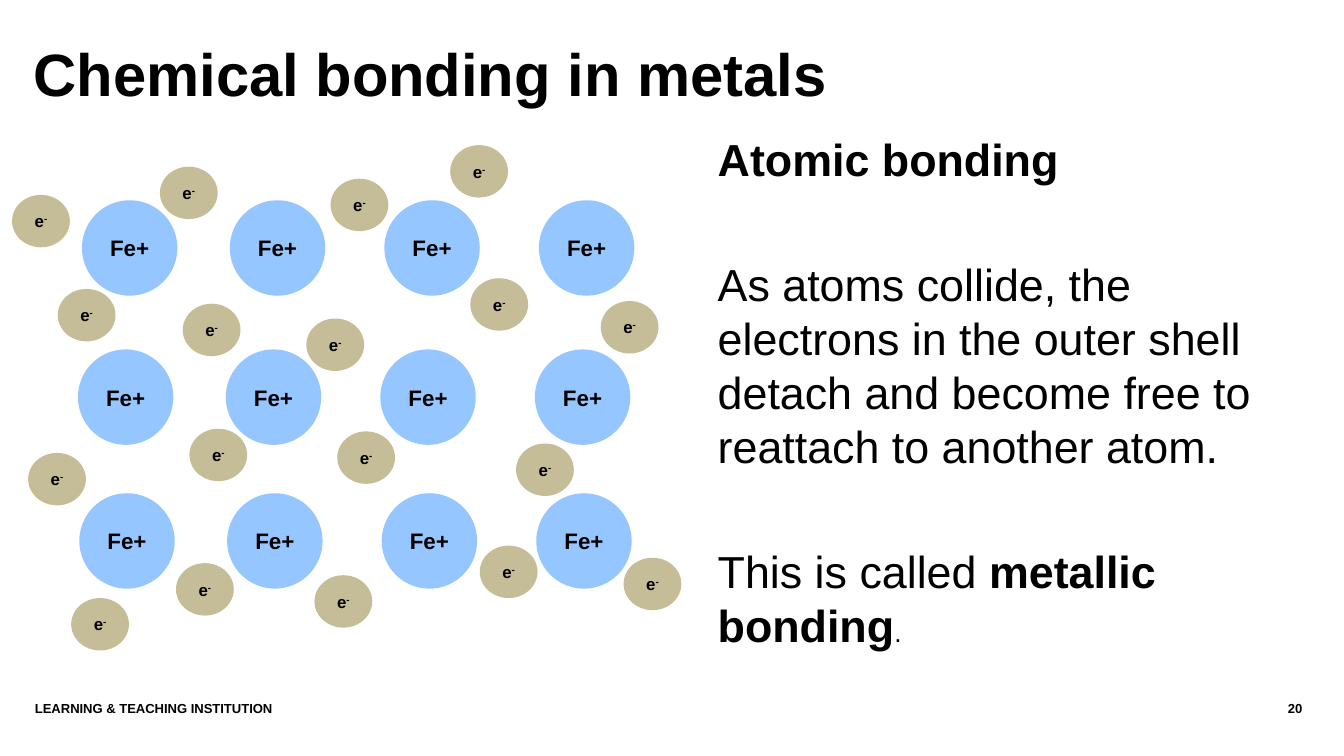
"""Build the slide on chemical bonding in metals."""
from pptx import Presentation
from pptx import util as u
from pptx.dml.color import RGBColor
from pptx.enum import shapes, text

BLACK = RGBColor(0x00, 0x00, 0x00)
ION_BLUE = RGBColor(0x96, 0xC6, 0xFF)
ELECTRON_TAN = RGBColor(0xC4, 0xBD, 0x97)
FONT = "Arial"

TITLE = "Chemical bonding in metals"
EXPLANATION = [
    [("Atomic bonding", {"bold": True})],
    [("As atoms collide, the electrons in the outer shell detach and "
      "become free to reattach to another atom.", {})],
    [("This is called ", {}), ("metallic bonding", {"bold": True}),
     (".", {"size": 14})],
]
FOOTER = "LEARNING & TEACHING INSTITUTION"
PAGE = "20"

ION = [[("Fe+", {})]]
ION_SIZE = (0.71, 0.71)
ION_COLUMNS = (0.61, 1.71, 2.86, 4.01)
ION_ROWS = ((1.49, 0), (2.6, -0.03), (3.67, -0.02))

ELECTRON = [[("e", {}), ("-", {"raised": True})]]
ELECTRON_SIZE = (0.43, 0.39)
ELECTRONS = [
    (0.09, 1.45), (1.19, 1.24), (2.46, 1.33), (3.35, 1.08),
    (0.43, 2.15), (1.36, 2.26), (2.28, 2.37), (3.5, 2.07), (4.47, 2.24),
    (0.21, 3.37), (1.41, 3.19), (2.51, 3.21), (3.84, 3.3),
    (0.53, 4.45), (1.31, 4.19), (2.34, 4.28), (3.57, 4.06), (4.64, 4.15),
]


def write(shape, paragraphs, size, bold=True, align=text.PP_ALIGN.LEFT,
          anchor=text.MSO_ANCHOR.TOP, leading=1.2, gap=0):
    frame = shape.text_frame
    frame.word_wrap = True
    frame.auto_size = text.MSO_AUTO_SIZE.NONE
    frame.vertical_anchor = anchor
    frame.margin_left = frame.margin_right = 0
    frame.margin_top = frame.margin_bottom = 0
    for index, runs in enumerate(paragraphs):
        paragraph = frame.add_paragraph() if index else frame.paragraphs[0]
        paragraph.alignment = align
        paragraph.space_before = u.Pt(gap if index else 0)
        if leading:
            paragraph.line_spacing = u.Pt(size * leading)
        for words, style in runs:
            run = paragraph.add_run()
            run.text = words
            run.font.name = FONT
            run.font.size = u.Pt(style.get("size", size))
            run.font.bold = style.get("bold", bold)
            run.font.color.rgb = BLACK
            if style.get("raised"):
                run.font._element.set("baseline", "30000")


def add_box(slide, place, paragraphs, size, **style):
    box = slide.shapes.add_textbox(*map(u.Inches, place))
    write(box, paragraphs, size, **style)


def add_particle(slide, corner, extent, colour, label, size):
    particle = slide.shapes.add_shape(
        shapes.MSO_SHAPE.OVAL, *map(u.Inches, corner + extent))
    particle.shadow.inherit = False
    particle.fill.solid()
    particle.fill.fore_color.rgb = colour
    particle.line.fill.background()
    write(particle, label, size, align=text.PP_ALIGN.CENTER,
          anchor=text.MSO_ANCHOR.MIDDLE, leading=None)


def main():
    deck = Presentation()
    deck.slide_width = u.Inches(10)
    deck.slide_height = u.Inches(10 * 9 / 16)
    slide = deck.slides.add_slide(deck.slide_layouts[5])

    title = slide.shapes.title
    title.left, title.top = u.Inches(0.25), u.Inches(0.27)
    title.width, title.height = u.Inches(9.23), u.Inches(0.76)
    write(title, [[(TITLE, {})]], 32)

    add_box(slide, (5.34, 0.98, 4.19, 3.94), EXPLANATION, 24,
            bold=False, gap=38.4)
    add_box(slide, (0.26, 5.21, 8.41, 0.3), [[(FOOTER, {})]], 7)

    for top, shift in ION_ROWS:
        for left in ION_COLUMNS:
            add_particle(slide, (left + shift, top), ION_SIZE, ION_BLUE, ION, 12)
    for corner in ELECTRONS:
        add_particle(slide, corner, ELECTRON_SIZE, ELECTRON_TAN, ELECTRON, 9)

    add_box(slide, (8.7, 5.21, 0.99, 0.3), [[(PAGE, {})]], 7,
            align=text.PP_ALIGN.RIGHT)
    deck.save("out.pptx")


if __name__ == "__main__":
    main()
